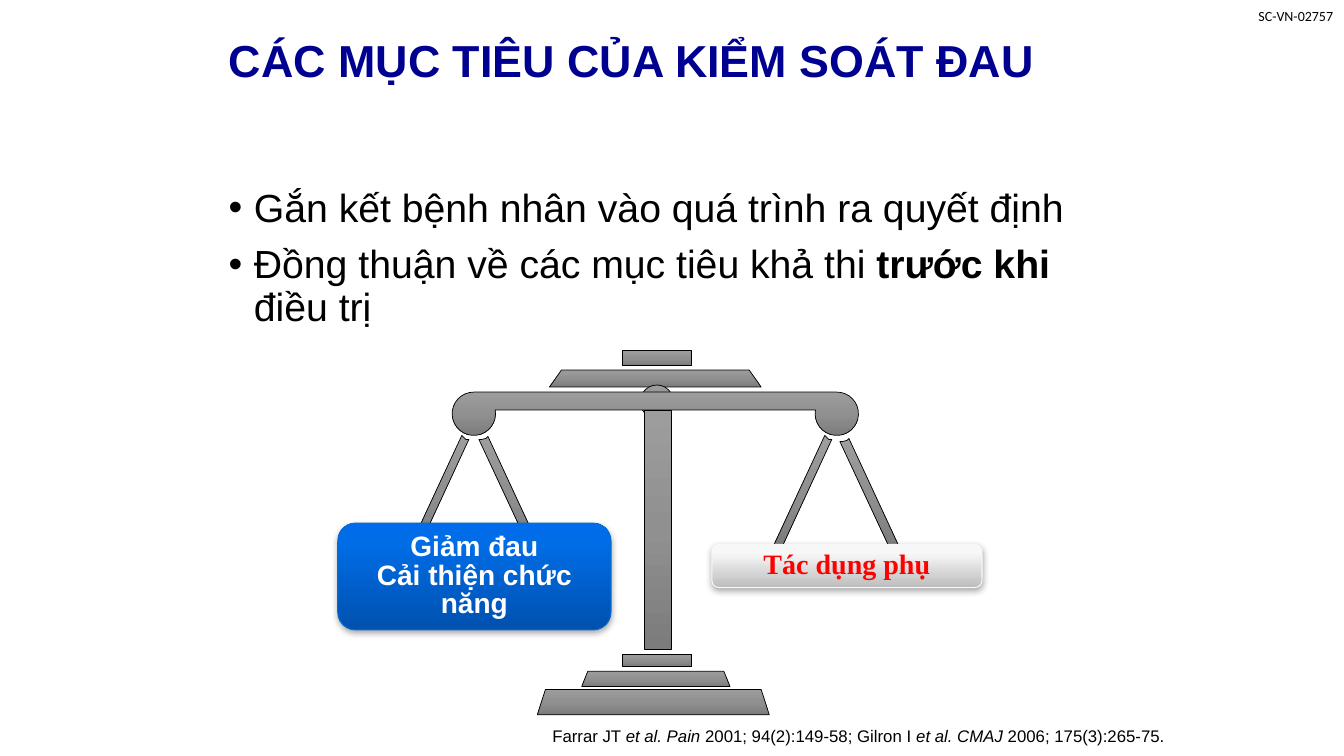
from dataclasses import dataclass
from math import cos, radians, sin
from typing import Optional

from lxml import etree
from pptx import Presentation
from pptx.dml.color import RGBColor
from pptx.enum.shapes import MSO_SHAPE
from pptx.enum.text import MSO_ANCHOR, PP_ALIGN
from pptx.oxml.ns import qn
from pptx.util import Pt

PX = 9144  # 100 px to the inch
LEFT, CENTER, RIGHT = PP_ALIGN.LEFT, PP_ALIGN.CENTER, PP_ALIGN.RIGHT
TOP, MIDDLE = MSO_ANCHOR.TOP, MSO_ANCHOR.MIDDLE
RECT, OVAL, ROUNDED = MSO_SHAPE.RECTANGLE, MSO_SHAPE.OVAL, MSO_SHAPE.ROUNDED_RECTANGLE

Point = tuple[float, float]


@dataclass(frozen=True)
class Gradient:
    stops: tuple[tuple[int, str], ...]
    angle: int  # clockwise degrees


@dataclass(frozen=True)
class Theme:
    navy: str = "000090"
    black: str = "000000"
    white: str = "FFFFFF"
    red: str = "FF0000"
    blue_edge: str = "076CCF"
    pale_edge: str = "F9F9F9"
    metal: Gradient = Gradient(((0, "9D9D9D"), (50, "909090"), (100, "7C7C7C")), 90)
    blue: Gradient = Gradient(((0, "0051AF"), (80, "006CE5"), (100, "006CEB")), 270)
    pale: Gradient = Gradient(((0, "BDBDBD"), (80, "F7F7F7"), (100, "F8F8F8")), 270)
    sans: str = "Arial"
    serif: str = "Times New Roman"
    code_font: str = "Calibri"
    title_size: int = 32
    body_size: int = 28
    pan_size: int = 20
    source_size: int = 12
    code_size: int = 10


@dataclass(frozen=True)
class Span:
    text: str
    bold: bool = False
    italic: bool = False


@dataclass(frozen=True)
class Box:
    left: int
    top: int
    width: int
    height: int

    def emu(self) -> tuple[int, ...]:
        return tuple(n * PX for n in (self.left, self.top, self.width, self.height))


@dataclass(frozen=True)
class Trapezoid:
    box: Box
    inset: int

    def outline(self) -> list[Point]:
        left, top = self.box.left, self.box.top
        right, bottom = left + self.box.width, top + self.box.height
        return [(right, bottom), (left, bottom),
                (left + self.inset, top), (right - self.inset, top)]


@dataclass(frozen=True)
class Pan:
    box: Box
    lines: tuple[str, ...]
    fill: Gradient
    edge: str
    font: str
    color: str
    anchor: MSO_ANCHOR


THEME = Theme()


def write(frame, paras: list[list[Span]], *, size: int, color: str, font: str = THEME.sans,
          align: PP_ALIGN = LEFT, anchor: MSO_ANCHOR = TOP, spacing: Optional[float] = None,
          before: int = 0, bullet: bool = False) -> None:
    frame.word_wrap = True
    frame.vertical_anchor = anchor
    for index, spans in enumerate(paras):
        para = frame.paragraphs[0] if index == 0 else frame.add_paragraph()
        para.alignment = align
        para.space_before = Pt(before if index else 0)
        if spacing:
            para.line_spacing = spacing
        if bullet:
            props = para._p.get_or_add_pPr()
            props.set("marL", str(25 * PX))
            props.set("indent", str(-25 * PX))
            etree.SubElement(props, qn("a:buFont")).set("typeface", THEME.sans)
            etree.SubElement(props, qn("a:buChar")).set("char", "•")
        for span in spans:
            run = para.add_run()
            run.text = span.text
            run.font.name = font
            run.font.size = Pt(size)
            run.font.bold = span.bold
            run.font.italic = span.italic
            run.font.color.rgb = RGBColor.from_string(color)


def paint(shape, gradient: Gradient, edge: str, edge_width: float) -> None:
    shape.shadow.inherit = False
    shape.fill.gradient()
    shape.fill.gradient_angle = 360 - gradient.angle
    stops = shape._element.spPr.find(qn("a:gradFill")).find(qn("a:gsLst"))
    for old in list(stops):
        stops.remove(old)
    for position, color in gradient.stops:
        stop = etree.SubElement(stops, qn("a:gs"), pos=str(position * 1000))
        etree.SubElement(stop, qn("a:srgbClr"), val=color)
    shape.line.color.rgb = RGBColor.from_string(edge)
    shape.line.width = Pt(edge_width)


def cast_shadow(shape) -> None:
    effects = shape._element.spPr.find(qn("a:effectLst"))
    shadow = etree.SubElement(effects, qn("a:outerShdw"), blurRad=str(Pt(5)),
                              dist=str(Pt(1.8)), dir="5400000", rotWithShape="0")
    color = etree.SubElement(shadow, qn("a:srgbClr"), val=THEME.black)
    etree.SubElement(color, qn("a:alpha"), val="35000")


def add_metal(shapes, kind: MSO_SHAPE, box: Box) -> None:
    paint(shapes.add_shape(kind, *box.emu()), THEME.metal, THEME.black, 0.5)


def add_outline(shapes, points: list[Point]) -> None:
    (start_x, start_y), *rest = [(round(x * PX), round(y * PX)) for x, y in points]
    builder = shapes.build_freeform(start_x, start_y, scale=1.0)
    builder.add_line_segments(rest, close=True)
    paint(builder.convert_to_shape(), THEME.metal, THEME.black, 0.5)


def arc(center_x: int, start: int, end: int) -> list[Point]:
    """Points on a beam knob, in degrees counterclockwise from the right."""
    steps = 24
    angles = [radians(start + (end - start) * i / steps) for i in range(steps + 1)]
    return [(center_x + 21.5 * cos(a), 410.5 - 21.5 * sin(a)) for a in angles]


def shifted(points: list[Point], dx: int, dy: int) -> list[Point]:
    return [(x + dx, y + dy) for x, y in points]


def add_scale(page) -> None:
    parts = page.shapes.add_group_shape().shapes
    # Top cap, hub and beam
    add_metal(parts, RECT, Box(617, 348, 69, 15))
    add_outline(parts, Trapezoid(Box(545, 367, 210, 17), 12).outline())
    add_metal(parts, OVAL, Box(635, 382, 33, 33))
    add_outline(parts, arc(470, 90, 370) + arc(830, 170, 450))
    # Column and base
    add_metal(parts, RECT, Box(639, 407, 27, 237))
    add_metal(parts, RECT, Box(617, 649, 69, 12))
    for step in (Trapezoid(Box(577, 666, 147, 15), 6), Trapezoid(Box(533, 684, 230, 25), 8)):
        add_outline(parts, step.outline())
    # Hanging arms, the same pair on each side
    outer = [(458, 432), (460, 434), (462, 436), (465, 436), (415, 544), (406, 544)]
    inner = [(475, 436), (478, 436), (482, 435), (484, 433), (535, 543), (525, 543)]
    for arm, dx, dy in ((outer, 360, 0), (outer, 0, 0), (inner, 358, 2), (inner, 0, 0)):
        add_outline(parts, shifted(arm, dx, dy))


def add_pan(page, pan: Pan) -> None:
    shape = page.shapes.add_shape(ROUNDED, *pan.box.emu())
    paint(shape, pan.fill, pan.edge, 0.75)
    cast_shadow(shape)
    write(shape.text_frame, [[Span(line, bold=True)] for line in pan.lines],
          size=THEME.pan_size, color=pan.color, font=pan.font, align=CENTER,
          anchor=pan.anchor, spacing=0.85)


def add_text(page, box: Box, paras: list[list[Span]], **text_format) -> None:
    write(page.shapes.add_textbox(*box.emu()).text_frame, paras, **text_format)


def main() -> None:
    deck = Presentation()
    deck.slide_width, deck.slide_height = 1333 * PX, 750 * PX
    page = deck.slides.add_slide(deck.slide_layouts[5])

    # Title and document code
    title = page.shapes.title
    title.left, title.top, title.width, title.height = Box(217, 0, 900, 125).emu()
    write(title.text_frame, [[Span("CÁC MỤC TIÊU CỦA KIỂM SOÁT ĐAU", bold=True)]],
          size=THEME.title_size, color=THEME.navy, anchor=MIDDLE, spacing=0.9)
    add_text(page, Box(1207, 3, 125, 27), [[Span("SC-VN-02757")]], size=THEME.code_size,
             color=THEME.black, font=THEME.code_font, align=RIGHT)

    # Goals and source
    add_text(page, Box(217, 182, 900, 495),
             [[Span("Gắn kết bệnh nhân vào quá trình ra quyết định")],
              [Span("Đồng thuận về các mục tiêu khả thi "), Span("trước khi", bold=True),
               Span(" điều trị")]],
             size=THEME.body_size, color=THEME.black, spacing=0.9, before=10, bullet=True)
    add_text(page, Box(283, 715, 882, 30),
             [[Span("Farrar JT "), Span("et al. Pain ", italic=True),
               Span("2001; 94(2):149-58; Gilron I "), Span("et al. CMAJ", italic=True),
               Span(" 2006; 175(3):265-75.")]],
             size=THEME.source_size, color=THEME.black, align=RIGHT)

    # Scale with its two pans
    add_scale(page)
    for pan in (
        Pan(Box(335, 519, 271, 106), ("Giảm đau", "Cải thiện chức năng"), THEME.blue,
            THEME.blue_edge, THEME.sans, THEME.white, MIDDLE),
        Pan(Box(706, 540, 268, 43), ("Tác dụng phụ",), THEME.pale,
            THEME.pale_edge, THEME.serif, THEME.red, TOP),
    ):
        add_pan(page, pan)

    deck.save("out.pptx")


if __name__ == "__main__":
    main()
